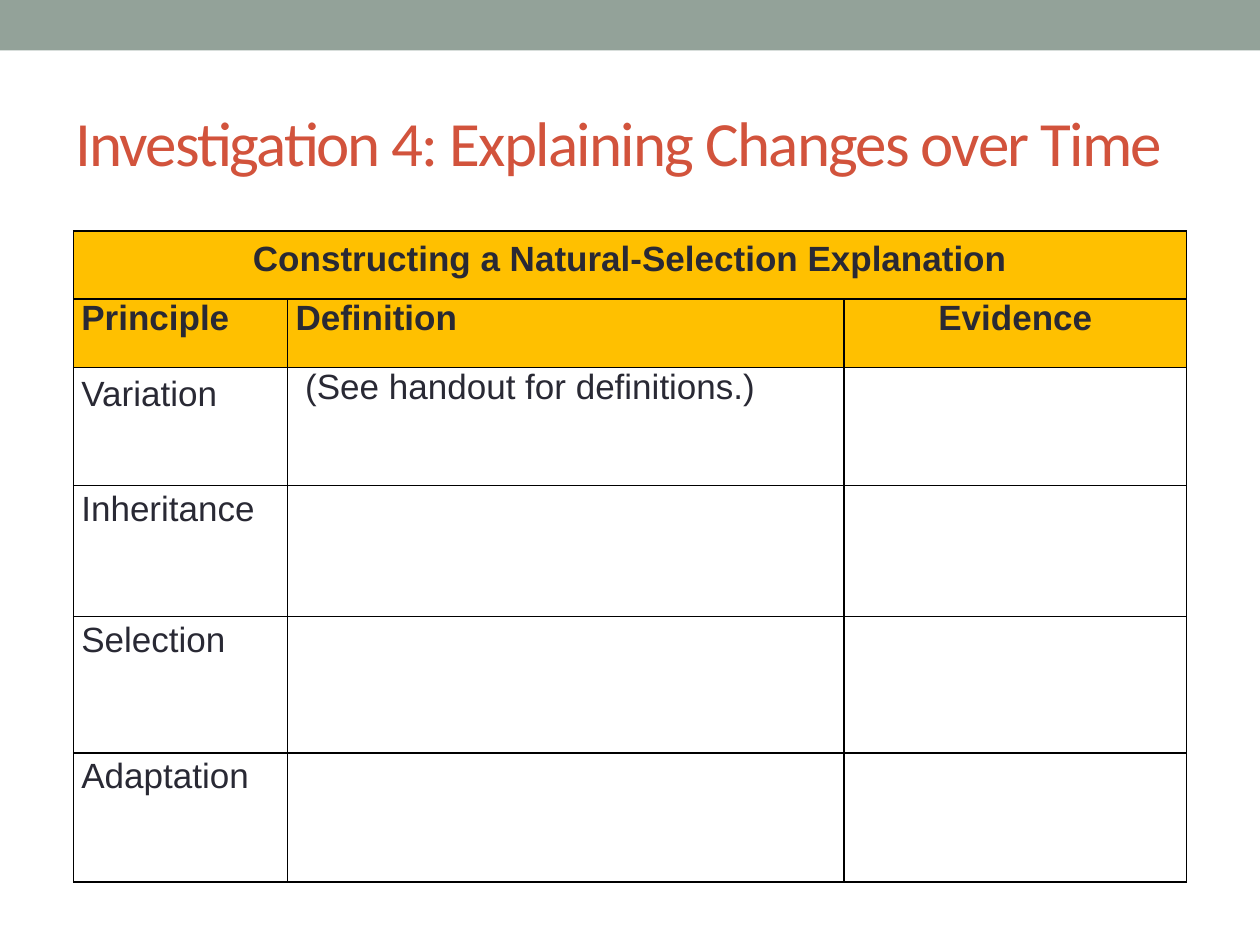
"""Build the natural-selection explanation slide."""
from lxml import etree
from pptx import Presentation
from pptx.dml.color import RGBColor
from pptx.enum import shapes, text
from pptx.oxml import ns
from pptx.util import Pt

SAGE = RGBColor(0x93, 0xA2, 0x99)
RUST = RGBColor(0xD2, 0x53, 0x3C)
INK = RGBColor(0x29, 0x29, 0x34)
GOLD = RGBColor(0xFF, 0xC0, 0x00)
WHITE = RGBColor(0xFF, 0xFF, 0xFF)
BLACK = RGBColor(0x00, 0x00, 0x00)


def border(cell):
    props = cell._tc.get_or_add_tcPr()
    for i, side in enumerate("LRTB"):
        line = etree.Element(ns.qn(f"a:ln{side}"), w=str(Pt(1)))
        fill = etree.SubElement(line, ns.qn("a:solidFill"))
        etree.SubElement(fill, ns.qn("a:srgbClr"), val=str(BLACK))
        props.insert(i, line)


deck = Presentation()
deck.slide_width, deck.slide_height = Pt(720), Pt(540)
slide = deck.slides.add_slide(deck.slide_layouts[6])

band = slide.shapes.add_shape(
    shapes.MSO_SHAPE.RECTANGLE, 0, 0, Pt(720), Pt(28.8))
band.shadow.inherit = False
band.fill.solid()
band.fill.fore_color.rgb = SAGE
band.line.fill.background()

title = slide.shapes.add_textbox(Pt(36), Pt(42), Pt(648), Pt(78))
frame = title.text_frame
frame.word_wrap = True
frame.vertical_anchor = text.MSO_ANCHOR.MIDDLE
para = frame.paragraphs[0]
run = para.add_run()
run.text = "Investigation 4: Explaining Changes over Time"
run.font.size = Pt(36)
run.font.name = "Calibri"
run.font.color.rgb = RUST
run.font._element.set("spc", "-100")

rows = [
    (39, 5.3, ["Constructing a Natural-Selection Explanation", "", ""]),
    (39, 0, ["Principle", "Definition", "Evidence"]),
    (67.5, 4.3, ["Variation", "(See handout for definitions.)", ""]),
    (75, 2.3, ["Inheritance", "", ""]),
    (78, 2.3, ["Selection", "", ""]),
    (73.5, 2.3, ["Adaptation", "", ""]),
]
widths = [122.4, 318, 195.6]
table = slide.shapes.add_table(
    len(rows), len(widths), Pt(42), Pt(132), Pt(sum(widths)),
    Pt(sum(row[0] for row in rows))).table
for col, width in zip(table.columns, widths):
    col.width = Pt(width)

for r, (height, top, words) in enumerate(rows):
    table.rows[r].height = Pt(height)
    head = r < 2
    for c, word in enumerate(words):
        cell = table.cell(r, c)
        cell.fill.solid()
        cell.fill.fore_color.rgb = GOLD if head else WHITE
        border(cell)
        note = c == 1 and not head
        cell.margin_left = Pt(10 if note else 4.5)
        cell.margin_right = Pt(4.5)
        cell.margin_top = Pt(0 if note else top)
        cell.margin_bottom = 0
        para = cell.text_frame.paragraphs[0]
        para.text = word
        if r == 0 or c == 2:
            para.alignment = text.PP_ALIGN.CENTER
        para.font.size = Pt(20)
        para.font.name = "Arial"
        para.font.bold = head
        para.font.color.rgb = INK
table.cell(0, 0).merge(table.cell(0, 2))

deck.save("out.pptx")
